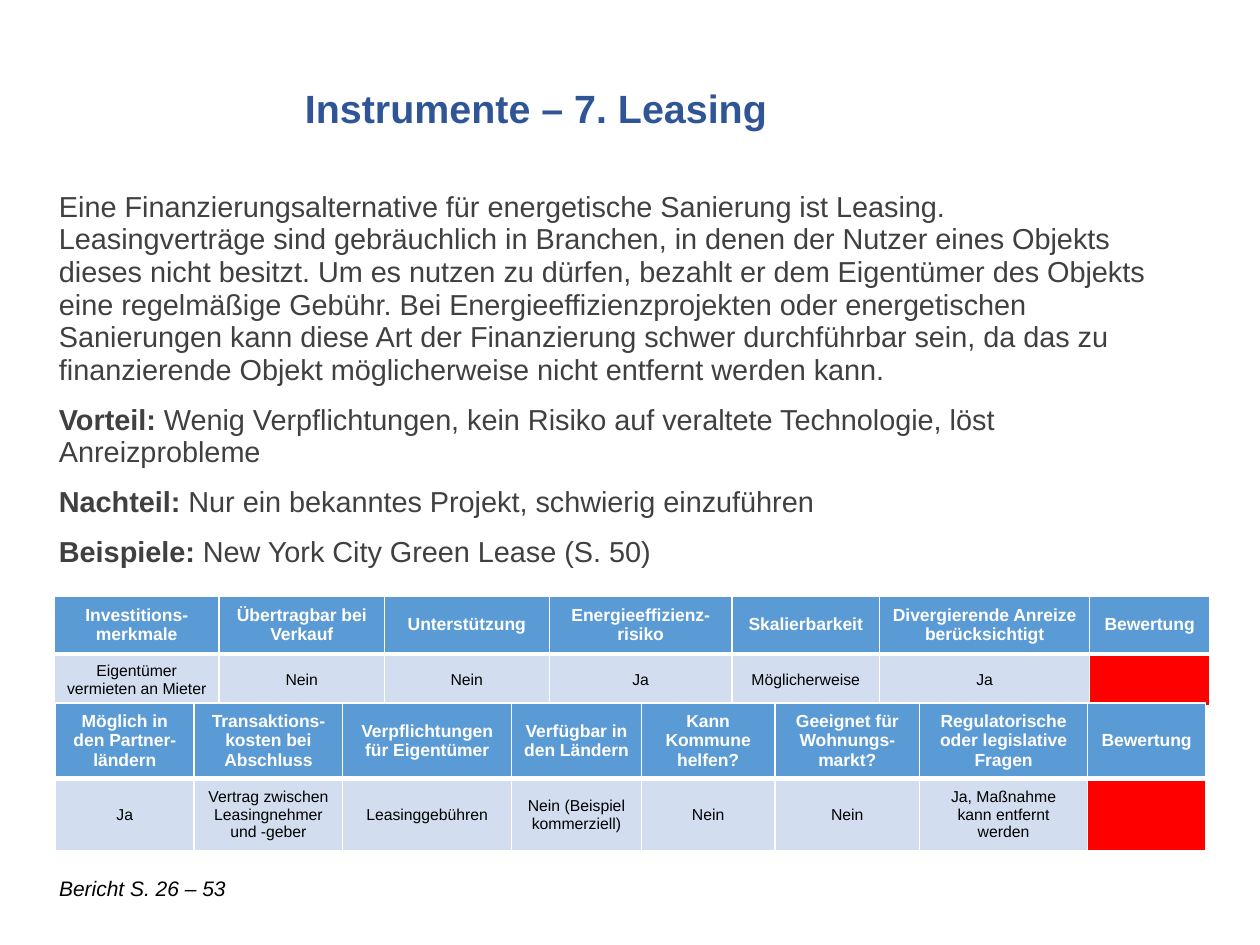
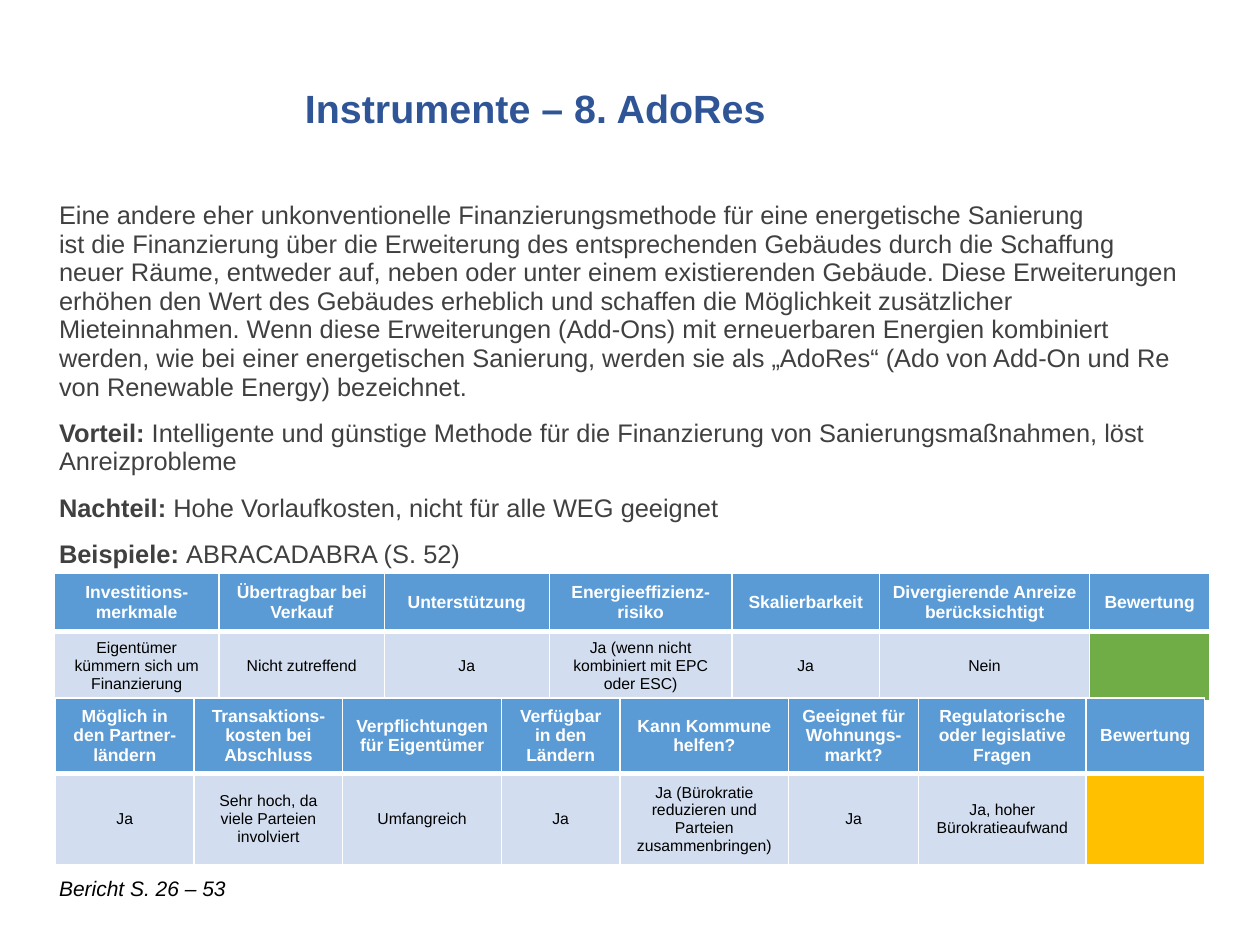
import copy

from lxml import etree
from pptx import Presentation
from pptx import util as u
from pptx.dml.color import RGBColor
from pptx.enum import text
from pptx.oxml.ns import qn

WHITE = RGBColor(0xFF, 0xFF, 0xFF)
BLACK = RGBColor(0, 0, 0)
TITLE_BLUE = RGBColor(0x2F, 0x55, 0x97)
BODY_GREY = RGBColor(0x40, 0x40, 0x40)
HEADER_BLUE = RGBColor(0x5B, 0x9B, 0xD5)
CELL_BLUE = RGBColor(0xD2, 0xDE, 0xEF)
RED = RGBColor(0xFF, 0, 0)
GREEN = RGBColor(0x70, 0xAD, 0x47)
AMBER = RGBColor(0xFF, 0xC0, 0)

FONT = "Arial"
SLIDE_WIDTH, SLIDE_HEIGHT = u.Inches(10), u.Inches(7.5)
COLUMN, ROW = SLIDE_WIDTH // 100, SLIDE_HEIGHT // 75

# Boxes are left, top, width, height in grid columns and rows
TITLE_BOX = (23.2, 6, 62.8, 5.6)
FOOTER_BOX = (3.7, 69, 23.2, 3)
FOOTER = "Bericht S. 26 – 53"

INVESTMENT_HEADERS = [
    "Investitions-merkmale", "Übertragbar bei Verkauf", "Unterstützung",
    "Energieeffizienz-risiko", "Skalierbarkeit",
    "Divergierende Anreize berücksichtigt", "Bewertung"]
INVESTMENT_COLUMNS = [13.1, 13.1, 13.1, 14.5, 11.7, 16.7, 9.5]
INVESTMENT_LEFT = 4.3

FEASIBILITY_HEADERS = [
    "Möglich in den Partner-ländern", "Transaktions-kosten bei Abschluss",
    "Verpflichtungen für Eigentümer", "Verfügbar in den Ländern",
    "Kann Kommune helfen?", "Geeignet für Wohnungs-markt?",
    "Regulatorische oder legislative Fragen", "Bewertung"]
FEASIBILITY_LEFT = 4.4

INSTRUMENTS = [
    {
        "title": "Instrumente – 7. Leasing",
        "body_box": (3.7, 14.7, 89.4, 47.3),
        "body_size": 16.5,
        "intro": "Eine Finanzierungsalternative für energetische Sanierung ist "
                 "Leasing. \nLeasingverträge sind gebräuchlich in Branchen, in "
                 "denen der Nutzer eines Objekts dieses nicht besitzt. Um es "
                 "nutzen zu dürfen, bezahlt er dem Eigentümer des Objekts eine "
                 "regelmäßige Gebühr. Bei Energieeffizienzprojekten oder "
                 "energetischen Sanierungen kann diese Art der Finanzierung "
                 "schwer durchführbar sein, da das zu finanzierende Objekt "
                 "möglicherweise nicht entfernt werden kann.",
        "points": {
            "Vorteil:": "Wenig Verpflichtungen, kein Risiko auf veraltete "
                        "Technologie, löst Anreizprobleme",
            "Nachteil:": "Nur ein bekanntes Projekt, schwierig einzuführen",
            "Beispiele:": "New York City Green Lease (S. 50)"},
        "investment": {
            "top": 47.3, "rows": [4.6, 4.1], "rating": RED,
            "values": ["Eigentümer vermieten an Mieter", "Nein", "Nein", "Ja",
                       "Möglicherweise", "Ja"]},
        "feasibility": {
            "top": 55.8, "rows": [5.8, 5.7], "rating": RED,
            "columns": [11, 11.8, 13.4, 10.3, 10.6, 11.5, 13.3, 9.4],
            "values": ["Ja", "Vertrag zwischen Leasingnehmer und -geber",
                       "Leasinggebühren", "Nein (Beispiel kommerziell)", "Nein",
                       "Nein", "Ja, Maßnahme kann entfernt werden"]},
    },
    {
        "title": "Instrumente – 8. AdoRes",
        "body_box": (3.7, 15.5, 91.5, 46.1),
        "body_size": 14.5,
        "intro": "Eine andere eher unkonventionelle Finanzierungsmethode für "
                 "eine energetische Sanierung \nist die Finanzierung über die "
                 "Erweiterung des entsprechenden Gebäudes durch die Schaffung "
                 "neuer Räume, entweder auf, neben oder unter einem "
                 "existierenden Gebäude. Diese Erweiterungen erhöhen den Wert "
                 "des Gebäudes erheblich und schaffen die Möglichkeit "
                 "zusätzlicher Mieteinnahmen. Wenn diese Erweiterungen "
                 "(Add-Ons) mit erneuerbaren Energien kombiniert werden, wie "
                 "bei einer energetischen Sanierung, werden sie als „AdoRes“ "
                 "(Ado von Add-On und Re von Renewable Energy) bezeichnet.",
        "points": {
            "Vorteil:": "Intelligente und günstige Methode für die Finanzierung "
                        "von Sanierungsmaßnahmen, löst Anreizprobleme",
            "Nachteil:": "Hohe Vorlaufkosten, nicht für alle WEG geeignet",
            "Beispiele:": "ABRACADABRA (S. 52)"},
        "investment": {
            "top": 45.5, "rows": [4.6, 5.5], "rating": GREEN,
            "values": ["Eigentümer kümmern sich um Finanzierung",
                       "Nicht zutreffend", "Ja",
                       "Ja (wenn nicht kombiniert mit EPC oder ESC)", "Ja",
                       "Nein"]},
        "feasibility": {
            "top": 55.4, "rows": [5.8, 7.2], "rating": AMBER,
            "columns": [11, 11.8, 12.6, 9.4, 13.4, 10.3, 13.3, 9.4],
            "values": ["Ja", "Sehr hoch, da viele Parteien involviert",
                       "Umfangreich", "Ja",
                       "Ja (Bürokratie reduzieren und Parteien "
                       "zusammenbringen)", "Ja", "Ja, hoher Bürokratieaufwand"]},
    },
]


def on_grid(box):
    """Turn a box in grid columns and rows into slide lengths."""
    left, top, width, height = box
    return (round(left * COLUMN), round(top * ROW),
            round(width * COLUMN), round(height * ROW))


def format_run(run, size, color, bold=False, italic=False):
    run.font.name = FONT
    run.font.size = u.Pt(size)
    run.font.color.rgb = color
    run.font.bold = bold
    run.font.italic = italic


def add_title(slide, title):
    shape = slide.shapes.title
    shape.left, shape.top, shape.width, shape.height = on_grid(TITLE_BOX)
    frame = shape.text_frame
    frame.text = title
    frame.vertical_anchor = text.MSO_ANCHOR.MIDDLE
    paragraph = frame.paragraphs[0]
    paragraph.alignment = text.PP_ALIGN.LEFT
    paragraph.line_spacing = 0.9
    format_run(paragraph.runs[0], 22.5, TITLE_BLUE, bold=True)


def add_text_frame(slide, box):
    frame = slide.shapes.add_textbox(*on_grid(box)).text_frame
    frame.word_wrap = True
    return frame


def add_body(slide, box, size, intro, points):
    frame = add_text_frame(slide, box)
    paragraph = frame.paragraphs[0]
    paragraph.text = intro
    paragraph.line_spacing = 0.94
    for run in paragraph.runs:
        format_run(run, size, BODY_GREY)
    for line_break in paragraph._p.findall(qn("a:br")):
        line_break.append(copy.deepcopy(paragraph.runs[0]._r.rPr))

    for label, statement in points.items():
        paragraph = frame.add_paragraph()
        paragraph.line_spacing = 0.94
        paragraph.space_before = u.Pt(10)
        for words, bold in ((f"{label} ", True), (statement, False)):
            run = paragraph.add_run()
            run.text = words
            format_run(run, size, BODY_GREY, bold=bold)


def add_footer(slide):
    frame = add_text_frame(slide, FOOTER_BOX)
    frame.text = FOOTER
    format_run(frame.paragraphs[0].runs[0], 12, BLACK, italic=True)


def set_borders(cell, **widths):
    """Draw white borders; widths are points by side: L, R, T, B."""
    properties = cell._tc.get_or_add_tcPr()
    for side, width in widths.items():
        line = etree.SubElement(properties, qn(f"a:ln{side}"), w=str(u.Pt(width)))
        fill = etree.SubElement(line, qn("a:solidFill"))
        etree.SubElement(fill, qn("a:srgbClr"), val=str(WHITE))


def fill_cell(cell, words, fill, size, color, bold):
    cell.fill.solid()
    cell.fill.fore_color.rgb = fill
    cell.vertical_anchor = text.MSO_ANCHOR.MIDDLE
    cell.text = words
    paragraph = cell.text_frame.paragraphs[0]
    paragraph.alignment = text.PP_ALIGN.CENTER
    for run in paragraph.runs:
        format_run(run, size, color, bold)


def add_rating_table(slide, left, top, columns, rows, headers, values, rating):
    """Add a header row and a value row that ends in a coloured rating cell."""
    box = on_grid((left, top, sum(columns), sum(rows)))
    table = slide.shapes.add_table(len(rows), len(columns), *box).table
    for column, width in zip(table.columns, columns):
        column.width = round(width * COLUMN)
    for row, height in zip(table.rows, rows):
        row.height = round(height * ROW)

    for index, header in enumerate(headers):
        header_cell, value_cell = table.cell(0, index), table.cell(1, index)
        set_borders(header_cell, L=1, R=1, T=1, B=3)
        fill_cell(header_cell, header, HEADER_BLUE, 10, WHITE, True)
        set_borders(value_cell, L=1, R=1, T=3, B=1)
        is_rating = index == len(values)
        fill_cell(value_cell, "" if is_rating else values[index],
                  rating if is_rating else CELL_BLUE, 9, BLACK, False)


def add_instrument_slide(presentation, instrument):
    slide = presentation.slides.add_slide(presentation.slide_layouts[5])
    add_body(slide, instrument["body_box"], instrument["body_size"],
             instrument["intro"], instrument["points"])
    add_title(slide, instrument["title"])
    add_footer(slide)
    add_rating_table(slide, INVESTMENT_LEFT, columns=INVESTMENT_COLUMNS,
                     headers=INVESTMENT_HEADERS, **instrument["investment"])
    add_rating_table(slide, FEASIBILITY_LEFT, headers=FEASIBILITY_HEADERS,
                     **instrument["feasibility"])


def main():
    presentation = Presentation()
    presentation.slide_width = SLIDE_WIDTH
    presentation.slide_height = SLIDE_HEIGHT
    for instrument in INSTRUMENTS:
        add_instrument_slide(presentation, instrument)
    presentation.save("out.pptx")


if __name__ == "__main__":
    main()
